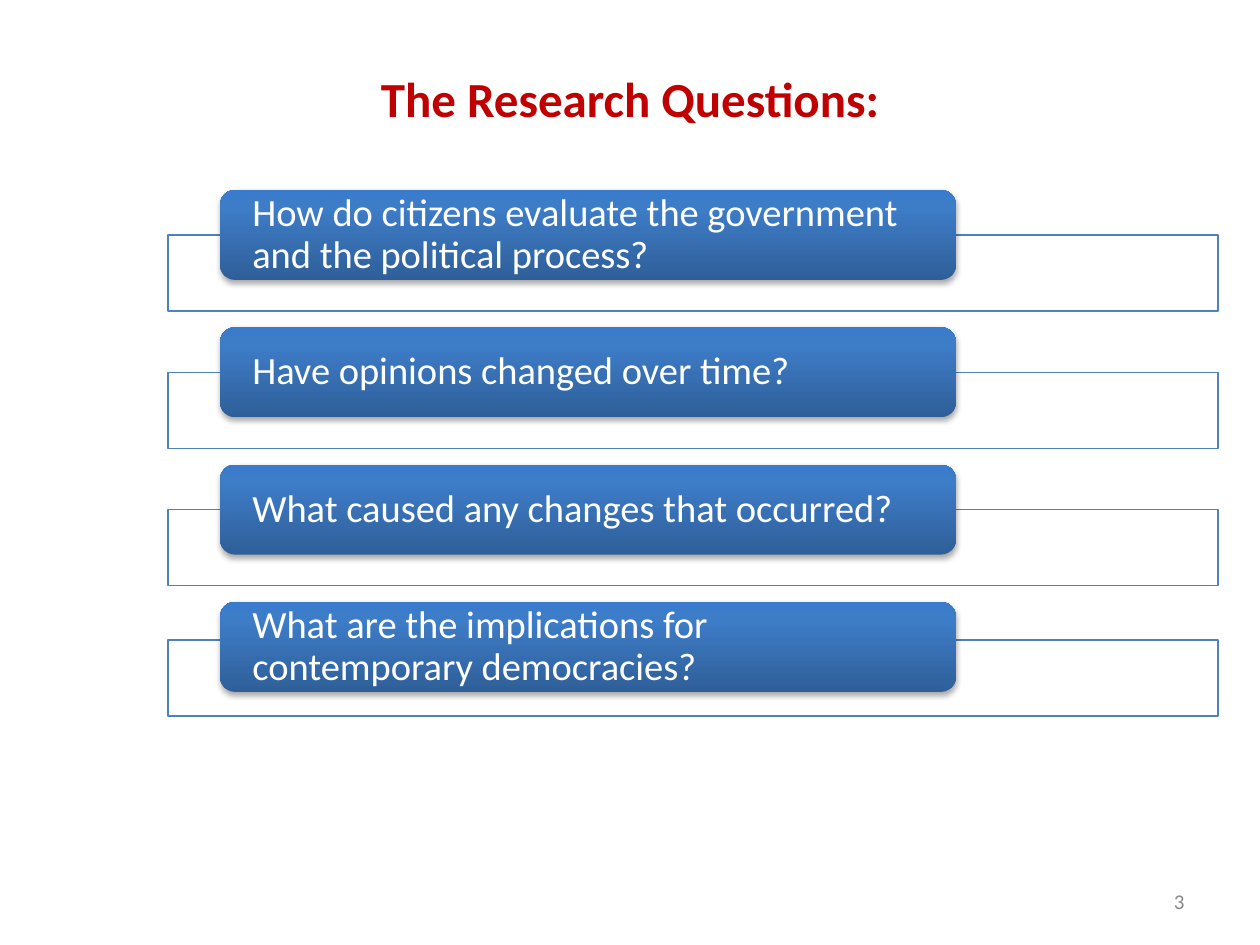
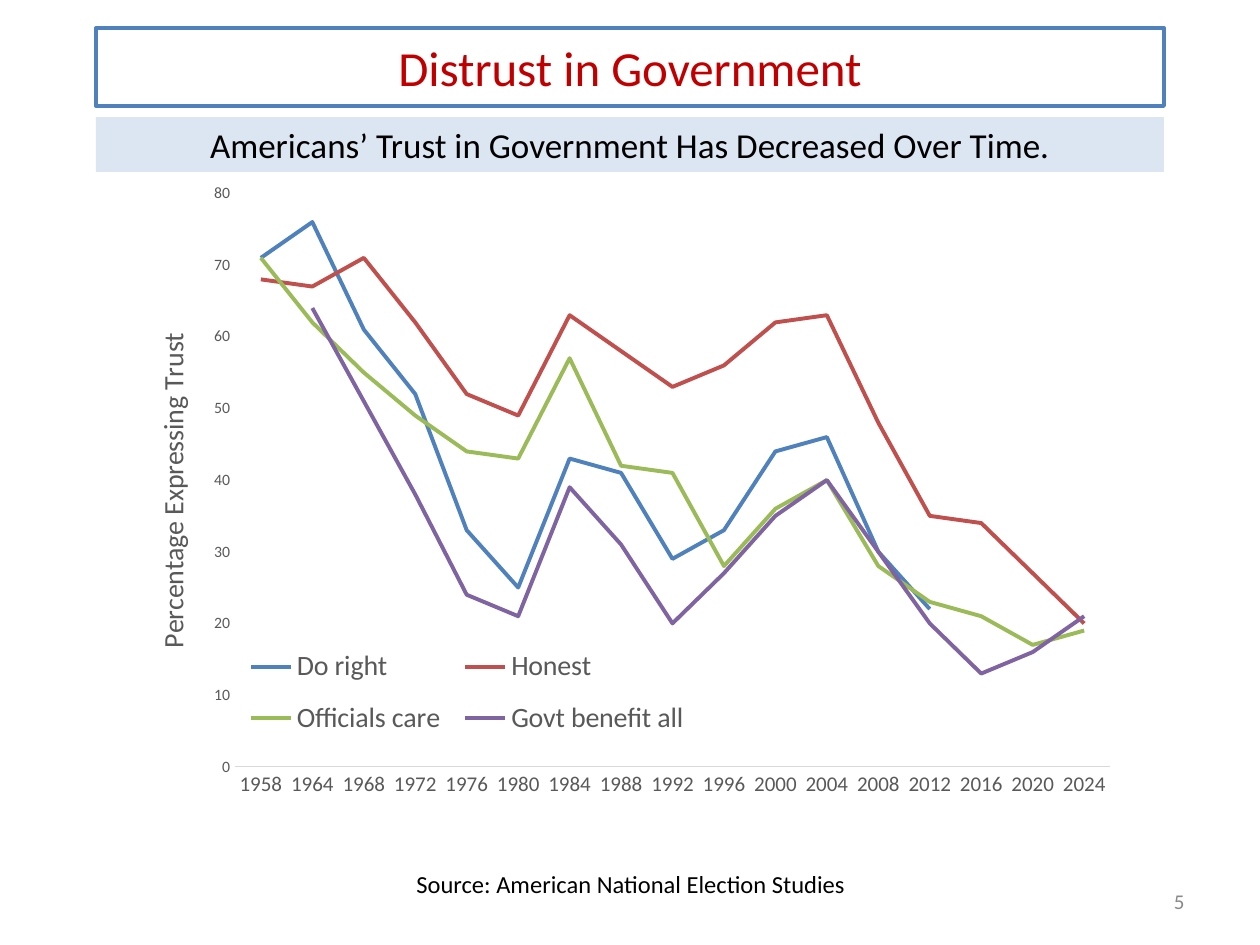
import copy

import pptx
import pptx.chart.data
import pptx.dml.color
import pptx.enum.chart
import pptx.enum.shapes
import pptx.enum.text
import pptx.oxml
import pptx.oxml.ns
import pptx.util

PX = 914400 // 126
SLIDE_SIZE = (1260, 945)
FONT_NAME = "Calibri"
TITLE_ONLY_LAYOUT = 5

COLORS = {
    "title": "C00000",
    "text": "000000",
    "white": "FFFFFF",
    "outline": "4F81BD",
    "banner": "DCE6F2",
    "number": "898989",
    "chart_text": "595959",
    "axis": "D9D9D9",
}
CARD_GRADIENT = [(0, "2F5F99"), (0.8, "3D7CC7"), (1, "3A7CCB")]

ALIGN = pptx.enum.text.PP_ALIGN
ANCHOR = pptx.enum.text.MSO_ANCHOR
SHAPE = pptx.enum.shapes.MSO_SHAPE

# Each question with the distance from its card's top to its frame's top
QUESTIONS = [
    ("How do citizens evaluate the government and the political process?", 45),
    ("Have opinions changed over time?", 45),
    ("What caused any changes that occurred?", 45),
    ("What are the implications for contemporary democracies?", 38),
]

YEARS = ["1958"] + [str(year) for year in range(1964, 2025, 4)]
TRUST_SERIES = [
    ("Do right", "4F81BD",
     [71, 76, 61, 52, 33, 25, 43, 41, 29, 33, 44, 46, 30, 22, None, None, None]),
    ("Honest", "C0504D",
     [68, 67, 71, 62, 52, 49, 63, 58, 53, 56, 62, 63, 48, 35, 34, 27, 20]),
    ("Officials care", "9BBB59",
     [71, 62, 55, 49, 44, 43, 57, 42, 41, 28, 36, 40, 28, 23, 21, 17, 19]),
    ("Govt benefit all", "8064A2",
     [None, 64, 51, 38, 24, 21, 39, 31, 20, 27, 35, 40, 30, 20, 13, 16, 21]),
]


def px(length):
    return pptx.util.Emu(round(length * PX))


def rgb(hex_color):
    return pptx.dml.color.RGBColor.from_string(hex_color)


def apply_format(target, values):
    for name, value in values.items():
        setattr(target, name, value)


def format_font(font, size, color, bold=False):
    apply_format(font, {"name": FONT_NAME, "size": pptx.util.Pt(size), "bold": bold})
    font.color.rgb = rgb(COLORS[color])


def set_line(line, color, width):
    line.color.rgb = rgb(color)
    line.width = pptx.util.Pt(width)


def drawing_element(tag, **attributes):
    element = pptx.oxml.parse_xml(f'<a:{tag} {pptx.oxml.ns.nsdecls("a")}/>')
    for name, value in attributes.items():
        element.set(name, str(value))
    return element


def write_text(shape, text, size, color, align=ALIGN.LEFT, anchor=ANCHOR.MIDDLE,
               bold=False, **frame_values):
    frame = shape.text_frame
    frame.text = text
    apply_format(frame, {"word_wrap": True, "vertical_anchor": anchor, **frame_values})
    paragraph = frame.paragraphs[0]
    paragraph.alignment = align
    format_font(paragraph.runs[0].font, size, color, bold)
    return paragraph


def add_box(slide, kind, box):
    shape = slide.shapes.add_shape(kind, *map(px, box))
    shape.shadow.inherit = False
    return shape


def add_text(slide, box, text, size, color, **options):
    shape = slide.shapes.add_textbox(*map(px, box))
    write_text(shape, text, size, color, **options)


def add_slide(presentation, title, title_box, number, bold=False):
    """Add a slide with the shared title style and page number."""
    slide = presentation.slides.add_slide(presentation.slide_layouts[TITLE_ONLY_LAYOUT])
    names = ("left", "top", "width", "height")
    apply_format(slide.shapes.title, dict(zip(names, map(px, title_box))))
    write_text(slide.shapes.title, title, 28, "title", align=ALIGN.CENTER, bold=bold)
    add_text(slide, (903, 876, 294, 50), number, 12, "number", align=ALIGN.RIGHT)
    return slide


def add_frame(slide, box):
    frame = add_box(slide, SHAPE.RECTANGLE, box)
    frame.fill.solid()
    frame.fill.fore_color.rgb = rgb(COLORS["white"])
    fill_color = frame._element.spPr.find(".//" + pptx.oxml.ns.qn("a:srgbClr"))
    fill_color.append(drawing_element("alpha", val=90000))
    set_line(frame.line, COLORS["outline"], 0.75)


def fill_card(card):
    card.fill.gradient()
    card.fill.gradient_angle = 90
    stop_list = card._element.spPr.find(".//" + pptx.oxml.ns.qn("a:gsLst"))
    stop_list.append(copy.deepcopy(stop_list[-1]))
    for stop, (position, color) in zip(card.fill.gradient_stops, CARD_GRADIENT):
        stop.color.rgb = rgb(color)
        stop.position = position
    card.line.fill.background()


def add_card_shadow(card):
    shadow = drawing_element("outerShdw", blurRad=40000, dist=23000,
                             dir=5400000, rotWithShape=0)
    shadow_color = drawing_element("srgbClr", val=COLORS["text"])
    shadow_color.append(drawing_element("alpha", val=35000))
    shadow.append(shadow_color)
    card._element.spPr.find(pptx.oxml.ns.qn("a:effectLst")).append(shadow)


def add_question_list(slide, box):
    """Stack question cards, each over a wide outlined frame."""
    left, top, width, height = box
    card_height = 90
    pitch = (height - card_height) / (len(QUESTIONS) - 1)
    for index, (question, frame_offset) in enumerate(QUESTIONS):
        card_top = top + index * pitch
        add_frame(slide, (left, card_top + frame_offset, width, 76))
        card = add_box(slide, SHAPE.ROUNDED_RECTANGLE,
                       (left + 52, card_top, 736, card_height))
        fill_card(card)
        add_card_shadow(card)
        paragraph = write_text(card, question, 22, "white", margin_left=px(28),
                               margin_right=px(28), margin_top=0, margin_bottom=0)
        paragraph.line_spacing = 0.9


def place_chart_part(element, index, **fractions):
    """Give a chart part a manual layout, in fractions of the chart."""
    tag = pptx.oxml.ns.qn("c:layout")
    for old_layout in element.findall(tag):
        element.remove(old_layout)
    target = '<c:layoutTarget val="inner"/>' if element.tag.endswith("plotArea") else ""
    sizes = "".join(f'<c:{name} val="{value}"/>' for name, value in fractions.items())
    element.insert(index, pptx.oxml.parse_xml(
        f'<c:layout {pptx.oxml.ns.nsdecls("c")}><c:manualLayout>{target}'
        f'<c:xMode val="edge"/><c:yMode val="edge"/>{sizes}'
        '</c:manualLayout></c:layout>'))


def format_axes(chart):
    no_tick = pptx.enum.chart.XL_TICK_MARK.NONE
    for axis, size in ((chart.category_axis, 12), (chart.value_axis, 9)):
        apply_format(axis, {"has_major_gridlines": False, "major_tick_mark": no_tick,
                            "minor_tick_mark": no_tick})
        format_font(axis.tick_labels.font, size, "chart_text")
    set_line(chart.category_axis.format.line, COLORS["axis"], 0.75)
    value_axis = chart.value_axis
    apply_format(value_axis, {"minimum_scale": 0, "maximum_scale": 80, "major_unit": 10})
    value_axis.format.line.fill.background()
    title = value_axis.axis_title
    title.text_frame.text = "Percentage Expressing Trust"
    format_font(title.text_frame.paragraphs[0].runs[0].font, 16, "chart_text")
    body = title._element.find(".//" + pptx.oxml.ns.qn("a:bodyPr"))
    body.set("rot", "-5400000")
    body.set("vert", "horz")
    place_chart_part(title._element, 1, x=0.06, y=0.24)


def format_legend(chart):
    chart.has_legend = True
    legend = chart.legend
    apply_format(legend, {"position": pptx.enum.chart.XL_LEGEND_POSITION.BOTTOM,
                          "include_in_layout": False})
    format_font(legend.font, 16, "chart_text")
    place_chart_part(legend._element, 1, x=0.14, y=0.67, w=0.43, h=0.17)


def add_trust_chart(slide, box):
    data = pptx.chart.data.CategoryChartData()
    data.categories = YEARS
    for name, _, values in TRUST_SERIES:
        data.add_series(name, values)
    chart = slide.shapes.add_chart(
        pptx.enum.chart.XL_CHART_TYPE.LINE, *map(px, box), data).chart
    chart.has_title = False
    format_font(chart.font, 10, "text")
    plot = chart.plots[0]
    plot.vary_by_categories = False
    for series, (_, color, _) in zip(plot.series, TRUST_SERIES):
        series.smooth = False
        series.marker.style = pptx.enum.chart.XL_MARKER_STYLE.NONE
        set_line(series.format.line, color, 2.25)
    format_axes(chart)
    format_legend(chart)
    plot_area = chart._chartSpace.find(".//" + pptx.oxml.ns.qn("c:plotArea"))
    place_chart_part(plot_area, 0, x=0.14, y=0.05, w=0.81, h=0.81)


def add_banner(slide, box, text):
    banner = add_box(slide, SHAPE.RECTANGLE, box)
    banner.fill.solid()
    banner.fill.fore_color.rgb = rgb(COLORS["banner"])
    banner.line.fill.background()
    write_text(banner, text, 20, "text", align=ALIGN.CENTER, anchor=ANCHOR.TOP)


def add_questions_slide(presentation):
    slide = add_slide(presentation, "The Research Questions:", (63, 38, 1134, 120),
                      "3", bold=True)
    add_question_list(slide, (168, 190, 1050, 502))


def add_trust_slide(presentation):
    slide = add_slide(presentation, "Distrust in Government", (96, 28, 1068, 78), "5")
    set_line(slide.shapes.title.line, COLORS["outline"], 2.25)
    add_text(slide, (404, 863, 483, 43), "Source: American National Election Studies",
             14, "text", anchor=ANCHOR.TOP)
    add_trust_chart(slide, (84, 158, 1080, 708))
    add_banner(slide, (96, 117, 1068, 55),
               "Americans’ Trust in Government Has Decreased Over Time.")


def main():
    presentation = pptx.Presentation()
    presentation.slide_width, presentation.slide_height = map(px, SLIDE_SIZE)
    add_questions_slide(presentation)
    add_trust_slide(presentation)
    presentation.save("out.pptx")


if __name__ == "__main__":
    main()
